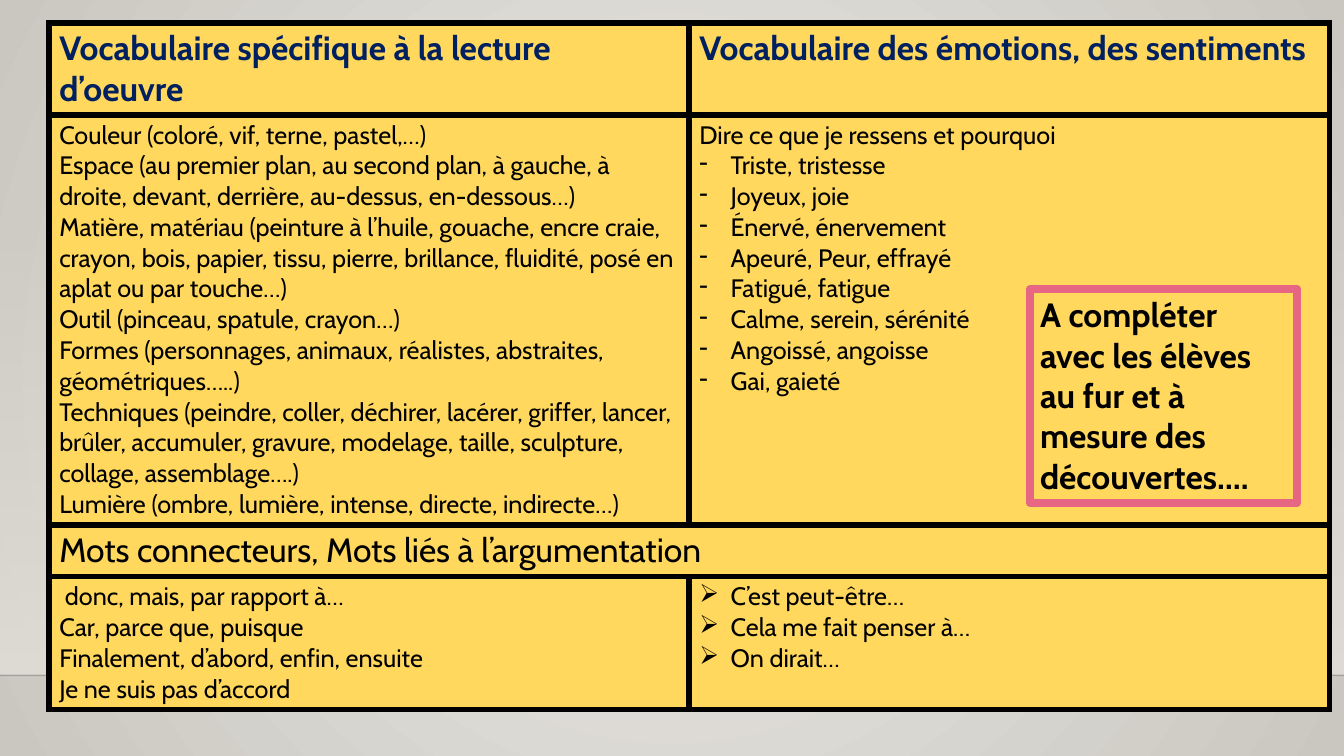
from lxml import etree
from pptx import Presentation
from pptx.dml.color import RGBColor
from pptx.enum.shapes import MSO_CONNECTOR, MSO_SHAPE
from pptx.enum.text import MSO_AUTO_SIZE
from pptx.oxml.ns import qn
from pptx.util import Cm, Pt

LINE = MSO_CONNECTOR.STRAIGHT
RECT = MSO_SHAPE.RECTANGLE
GROW = MSO_AUTO_SIZE.SHAPE_TO_FIT_TEXT

WORDS = [
    "Couleur (coloré, vif, terne, pastel,…)",
    "Espace (au premier plan, au second plan, à gauche, à droite, devant, "
    "derrière, au-dessus, en-dessous…)",
    "Matière, matériau (peinture à l’huile, gouache, encre craie, crayon, bois, "
    "papier, tissu, pierre, brillance, fluidité, posé en aplat ou par touche…)",
    "Outil (pinceau, spatule, crayon…)",
    "Formes (personnages, animaux, réalistes, abstraites, géométriques…..)",
    "Techniques (peindre, coller, déchirer, lacérer, griffer, lancer, brûler, "
    "accumuler, gravure, modelage, taille, sculpture, collage, assemblage….)",
    "Lumière (ombre, lumière, intense, directe, indirecte…)",
]
MOODS = [
    "Triste, tristesse",
    "Joyeux, joie",
    "Énervé, énervement",
    "Apeuré, Peur, effrayé",
    "Fatigué, fatigue",
    "Calme, serein, sérénité",
    "Angoissé, angoisse",
    "Gai, gaieté",
]
LINKS = [
    " donc, mais, par rapport à…",
    "Car, parce que, puisque",
    "Finalement, d’abord, enfin, ensuite",
    "Je ne suis pas d’accord",
]
STARTS = ["C’est peut-être…", "Cela me fait penser à…", "On dirait…"]


def color(code):
    return RGBColor.from_string(code)


def node(parent, tag, **attrs):
    child = etree.SubElement(parent, qn(tag))
    for key, val in attrs.items():
        child.set(key, str(val))
    return child


def write(frame, lines, size=18, ink="000000", bold=False, mark=None, plain=0):
    for i, line in enumerate(lines):
        para = frame.paragraphs[0] if i == 0 else frame.add_paragraph()
        if mark and i >= plain:
            props = para._p.get_or_add_pPr()
            props.set("marL", str(Cm(0.79)))
            props.set("indent", str(-Cm(0.79)))
            node(props, "a:buChar", char=mark)
        run = para.add_run()
        run.text = line
        font = run.font
        font.name = Deck.face
        font.size = Pt(size)
        font.bold = bold
        font.color.rgb = color(ink)


class Deck:
    face = "Cabin"
    gold = "FFD85D"
    edge = "000000"

    def __init__(self, wide, high):
        self.prs = Presentation()
        self.prs.slide_width = Cm(wide)
        self.prs.slide_height = Cm(high)
        self.slide = self.prs.slides.add_slide(self.prs.slide_layouts[6])
        self.shapes = self.slide.shapes

    def blend(self, fill, owner, stops):
        fill.gradient()
        grad = owner.find(".//" + qn("a:gradFill"))
        for child in list(grad):
            grad.remove(child)
        group = node(grad, "a:gsLst")
        for pos, code, alpha in stops:
            stop = node(group, "a:gs", pos=pos * 1000)
            tint = node(stop, "a:srgbClr", val=code)
            node(tint, "a:alpha", val=alpha * 1000)
        return grad

    def back(self, inner, outer):
        grad = self.blend(self.slide.background.fill, self.slide.element,
                          [(0, inner, 100), (100, outer, 100)])
        way = node(grad, "a:path", path="circle")
        node(way, "a:fillToRect", l=50000, t=50000, r=50000, b=50000)

    def wall(self, x, y, w, h, code):
        shape = self.shapes.add_shape(RECT, Cm(x), Cm(y), Cm(w), Cm(h))
        shape.shadow.inherit = False
        shape.line.fill.background()
        grad = self.blend(shape.fill, shape._element,
                          [(0, code, 0), (100, code, 100)])
        node(grad, "a:lin", ang=5400000, scaled=0)

    def rule(self, x, y, w, code, alpha):
        rule = self.shapes.add_connector(LINE, Cm(x), Cm(y), Cm(x + w), Cm(y))
        rule.line.width = Pt(1)
        rule.line.color.rgb = color(code)
        tint = rule._element.find(".//" + qn("a:ln")).find(".//" + qn("a:srgbClr"))
        node(tint, "a:alpha", val=alpha * 1000)
        node(rule._element.spPr, "a:effectLst")

    def grid(self, x, y, cols, rows):
        frame = self.shapes.add_table(len(rows), len(cols), Cm(x), Cm(y),
                                      Cm(sum(cols)), Cm(sum(rows)))
        table = frame.table
        for col, wide in zip(table.columns, cols):
            col.width = Cm(wide)
        for row, high in zip(table.rows, rows):
            row.height = Cm(high)
        for cell in table.iter_cells():
            props = cell._tc.get_or_add_tcPr()
            for side in "LRTB":
                line = node(props, "a:ln" + side, w=Pt(4.5))
                node(node(line, "a:solidFill"), "a:srgbClr", val=self.edge)
            cell.fill.solid()
            cell.fill.fore_color.rgb = color(self.gold)
        return table

    def note(self, x, y, w, h, text, code):
        box = self.shapes.add_textbox(Cm(x), Cm(y), Cm(w), Cm(h))
        box.line.color.rgb = color(code)
        box.line.width = Pt(6)
        box.text_frame.word_wrap = True
        box.text_frame.auto_size = GROW
        write(box.text_frame, [text], size=24, bold=True)


def main():
    deck = Deck(33.87, 19.05)
    deck.back("ECEAE7", "CAC7C1")
    deck.wall(0, 5.61, 33.87, 11.4, "DFDBD5")
    deck.rule(0, 17.02, 33.87, "000001", 20)

    table = deck.grid(1.24, 0.58, [16.13, 16.13], [2.3, 10.3, 1.3, 3.3])
    table.cell(2, 0).merge(table.cell(2, 1))
    head = {"size": 24, "ink": "002060", "bold": True}
    cells = [
        (0, 0, ["Vocabulaire spécifique à la lecture d’oeuvre"], head),
        (0, 1, ["Vocabulaire des émotions, des sentiments"], head),
        (1, 0, WORDS, {}),
        (1, 1, ["Dire ce que je ressens et pourquoi"] + MOODS,
         {"mark": "-", "plain": 1}),
        (2, 0, ["Mots connecteurs, Mots liés à l’argumentation"], {"size": 24}),
        (3, 0, LINKS, {}),
        (3, 1, STARTS, {"mark": "➢"}),
    ]
    for row, col, lines, style in cells:
        write(table.cell(row, col).text_frame, lines, **style)

    deck.note(25.96, 7.29, 6.73, 5.38,
              "A compléter avec les élèves au fur et à mesure des découvertes….",
              "E66684")
    deck.prs.save("out.pptx")


if __name__ == "__main__":
    main()
